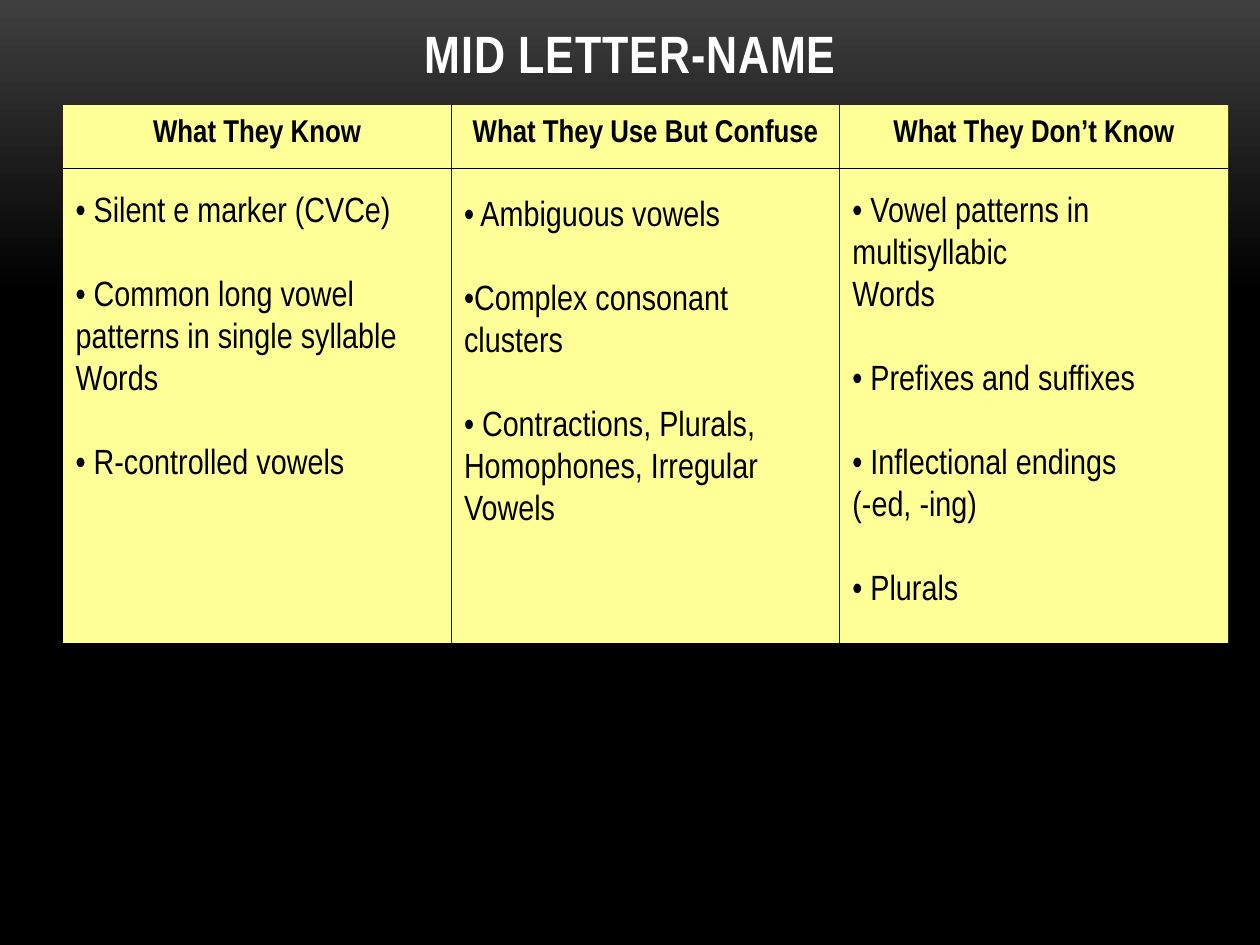
import pptx
import pptx.util
import pptx.dml.color
import pptx.enum.text
import pptx.enum.shapes
import pptx.oxml.ns
import lxml.etree

Cm = pptx.util.Cm
Pt = pptx.util.Pt
ALIGN = pptx.enum.text.PP_ALIGN
ANCHOR = pptx.enum.text.MSO_ANCHOR

COLORS = {
    "black": "000000",
    "white": "FFFFFF",
    "yellow": "FFFF97",
    "divider": "1F2123",
    "glow": "3F3F3F",
}
FORMATS = {
    "title": {"name": "Arial Narrow", "size": Pt(30), "bold": True},
    "heading": {"name": "Arial Narrow", "size": Pt(18), "bold": True},
    "item": {"name": "Arial Narrow", "size": Pt(20), "bold": False},
}
LEFT, TOP, COLUMN_WIDTH, COLUMN_HEIGHT = 1.27, 2.12, 7.83, 10.86
HEADING_BOTTOM, PANEL_TOP, PANEL_HEIGHT = 3.39, 12.98, 2.48
ITEM_GAP = 24

COLUMNS = [
    ("What They Know", 21.6, [
        "• Silent e marker (CVCe)",
        "• Common long vowel",
        "patterns in single syllable",
        "Words",
        "• R-controlled vowels",
    ]),
    ("What They Use But Confuse", 24, [
        "• Ambiguous vowels",
        "•Complex consonant clusters",
        "• Contractions, Plurals, Homophones, Irregular Vowels",
    ]),
    ("What They Don’t Know", 21.6, [
        "• Vowel patterns in multisyllabic",
        "Words",
        "• Prefixes and suffixes",
        "• Inflectional endings",
        "(-ed, -ing)",
        "• Plurals",
    ]),
]


def color(name):
    return pptx.dml.color.RGBColor.from_string(COLORS[name])


class SlideBuilder:
    def __init__(self, slide):
        self.slide = slide

    def background(self):
        fill = self.slide.background.fill
        fill.gradient()
        fill.gradient_angle = 270
        for stop, (position, name) in zip(fill.gradient_stops, [(0, "glow"), (0.31, "black")]):
            stop.position = position
            stop.color.rgb = color(name)

    def place(self, shape, left, top, width, height):
        shape.left, shape.top = Cm(left), Cm(top)
        shape.width, shape.height = Cm(width), Cm(height)

    def frame(self, shape, anchor):
        values = {
            "word_wrap": True,
            "auto_size": pptx.enum.text.MSO_AUTO_SIZE.NONE,
            "vertical_anchor": anchor,
        }
        for key, value in values.items():
            setattr(shape.text_frame, key, value)
        return shape.text_frame

    def add_text(self, paragraph, text, style, color_name, alignment, gap=0):
        properties = paragraph._p.get_or_add_pPr()
        properties.set("marL", "0")
        properties.set("indent", "0")
        lxml.etree.SubElement(properties, pptx.oxml.ns.qn("a:buNone"))
        paragraph.alignment = alignment
        paragraph.space_before = Pt(gap)
        run = paragraph.add_run()
        run.text = text
        for key, value in FORMATS[style].items():
            setattr(run.font, key, value)
        run.font.color.rgb = color(color_name)
        return run

    def title(self, text):
        shape = self.slide.shapes.title
        self.place(shape, 1.7, -0.2, 22.02, 2.03)
        paragraph = self.frame(shape, ANCHOR.BOTTOM).paragraphs[0]
        run = self.add_text(paragraph, text, "title", "white", ALIGN.CENTER)
        run._r.get_or_add_rPr().set("spc", "50")

    def column(self, shape, left, heading, first_gap, lines):
        self.place(shape, left, TOP, COLUMN_WIDTH, COLUMN_HEIGHT)
        shape.fill.solid()
        shape.fill.fore_color.rgb = color("yellow")
        frame = self.frame(shape, ANCHOR.TOP)
        self.add_text(frame.paragraphs[0], heading, "heading", "black", ALIGN.CENTER)
        for index, line in enumerate(lines):
            gap = first_gap if index == 0 else ITEM_GAP if line.startswith("•") else 0
            self.add_text(frame.add_paragraph(), line, "item", "black", ALIGN.LEFT, gap)

    def line(self, start, end, color_name):
        connector = self.slide.shapes.add_connector(
            pptx.enum.shapes.MSO_CONNECTOR.STRAIGHT, *map(Cm, start + end))
        connector.line.width = Pt(0.75)
        connector.line.color.rgb = color(color_name)
        lxml.etree.SubElement(connector._element.spPr, pptx.oxml.ns.qn("a:effectLst"))

    def panel(self, left, top, width, height):
        shape = self.slide.shapes.add_shape(
            pptx.enum.shapes.MSO_SHAPE.RECTANGLE, *map(Cm, (left, top, width, height)))
        shape.shadow.inherit = False
        shape.fill.solid()
        shape.fill.fore_color.rgb = color("black")
        shape.line.color.rgb = color("black")
        shape.line.width = Pt(0.85)


def main():
    presentation = pptx.Presentation()
    presentation.slide_width, presentation.slide_height = Cm(25.4), Cm(19.05)
    comparison_layout = presentation.slide_layouts.get_by_name("Comparison")
    slide = presentation.slides.add_slide(comparison_layout)
    builder = SlideBuilder(slide)
    builder.background()
    builder.title("MID LETTER-NAME")

    bodies = list(slide.placeholders)[1:]
    edges = [LEFT + index * COLUMN_WIDTH for index in range(len(COLUMNS) + 1)]
    for shape, left, column in zip(bodies, edges, COLUMNS):
        builder.column(shape, left, *column)
    for unused in bodies[len(COLUMNS):]:
        unused._element.getparent().remove(unused._element)

    for edge in edges[1:-1]:
        builder.line((edge, TOP), (edge, PANEL_TOP + PANEL_HEIGHT), "divider")
    builder.line((LEFT, HEADING_BOTTOM), (edges[-1], HEADING_BOTTOM), "black")
    builder.panel(LEFT, PANEL_TOP, edges[-1] - LEFT, PANEL_HEIGHT)
    presentation.save("out.pptx")


if __name__ == "__main__":
    main()
